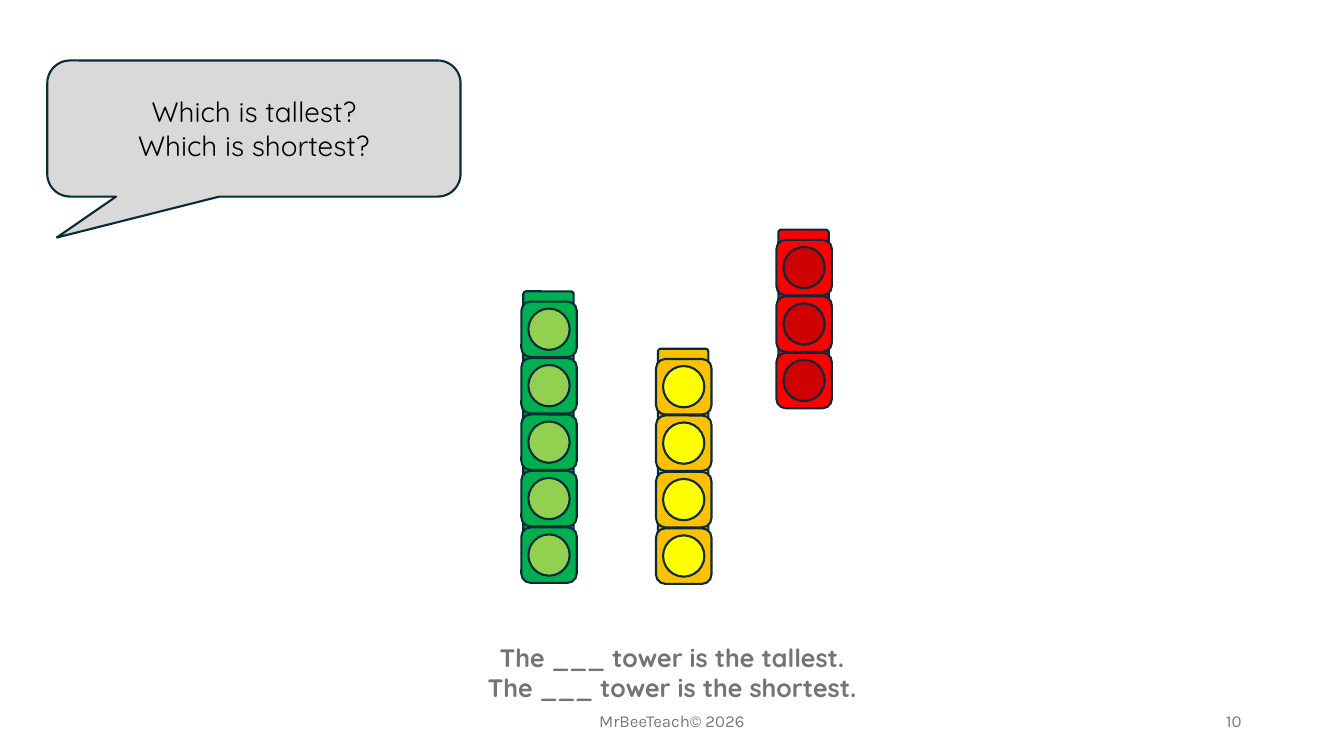
"""Build the tower comparison slide with its question, cube towers and answer stems."""
from dataclasses import dataclass

from lxml import etree
from pptx import Presentation
from pptx.dml import color
from pptx.enum import shapes, text
from pptx.oxml import ns
from pptx.util import Pt

COLOURS = {
    "outline": "092A39",
    "speech": "D9D9D9",
    "question": "000000",
    "answer": "747474",
    "footer": "797979",
    "green": "00B050",
    "light green": "92D050",
    "orange": "FFC000",
    "yellow": "FFFF00",
    "red": "FF0000",
    "dark red": "CC0000",
}
CUBE_SIZE = 39.6
CUBE_PITCH = 40.32
CAP_RISE = 7.3


@dataclass(frozen=True)
class Tower:
    """A stack of cubes, placed by the top left of its lowest cube."""
    left: float
    base: float
    cubes: int
    body: str
    disc: str
    opacity: int = 100


@dataclass(frozen=True)
class Caption:
    """A text box with its lines and format."""
    box: tuple
    lines: tuple
    font: str
    size: float
    colour: str
    align: text.PP_ALIGN = text.PP_ALIGN.CENTER
    anchor: text.MSO_ANCHOR = text.MSO_ANCHOR.MIDDLE
    bold: bool = False


TOWERS = (
    Tower(372.4, 376.7, 5, "green", "light green"),
    Tower(468.6, 377.4, 4, "orange", "yellow"),
    Tower(554.6, 252, 3, "red", "dark red", opacity=93),
)
CAPTIONS = (
    Caption((318, 500.4, 324, 28.8), ("MrBeeTeach© 2026",), "Karla", 12, "footer"),
    Caption((678, 500.4, 216, 28.8), ("10",), "Karla", 12, "footer",
            align=text.PP_ALIGN.RIGHT),
    Caption((240, 455, 480, 51), ("The ___ tower is the tallest.", "The ___ tower is the shortest."),
            "Quicksand", 18, "answer", anchor=text.MSO_ANCHOR.TOP, bold=True),
)


def write(frame, lines: tuple, *, font: str, size: float, colour: str,
          align=text.PP_ALIGN.CENTER, anchor=text.MSO_ANCHOR.MIDDLE, bold: bool = False) -> None:
    """Fill a text frame with one paragraph per line."""
    frame.word_wrap = True
    frame.vertical_anchor = anchor
    for index, line in enumerate(lines):
        paragraph = frame.add_paragraph() if index else frame.paragraphs[0]
        paragraph.alignment = align
        run = paragraph.add_run()
        run.text = line
        run.font.name = font
        run.font.size = Pt(size)
        run.font.bold = bold
        run.font.color.rgb = color.RGBColor.from_string(COLOURS[colour])


def draw(parent, kind, box: tuple, fill: str, opacity: int = 100):
    """Add an outlined preset shape, given its box in points."""
    shape = parent.add_shape(kind, *map(Pt, box))
    shape.shadow.inherit = False
    shape.fill.solid()
    shape.fill.fore_color.rgb = color.RGBColor.from_string(COLOURS[fill])
    if opacity < 100:
        tint = shape._element.spPr.find(".//" + ns.qn("a:srgbClr"))
        etree.SubElement(tint, ns.qn("a:alpha"), val=str(opacity * 1000))
    shape.line.color.rgb = color.RGBColor.from_string(COLOURS["outline"])
    shape.line.width = Pt(1.5)
    return shape


def draw_tower(slide, tower: Tower) -> None:
    """Stack the cubes of a tower from the bottom up in one group."""
    stack = slide.shapes.add_group_shape().shapes
    rounded, round_ = shapes.MSO_SHAPE.ROUNDED_RECTANGLE, shapes.MSO_SHAPE.OVAL
    for level in range(tower.cubes):
        left, top = tower.left, tower.base - level * CUBE_PITCH
        draw(stack, rounded, (left + 1.4, top - CAP_RISE, 36, 12.2), tower.body)
        draw(stack, rounded, (left, top, CUBE_SIZE, CUBE_SIZE), tower.body)
        draw(stack, round_, (left + 5, top + 5, 29.5, 29.5), tower.disc, tower.opacity)


def draw_question(slide) -> None:
    """Add the speech bubble that asks the question."""
    bubble = draw(slide.shapes, shapes.MSO_SHAPE.ROUNDED_RECTANGULAR_CALLOUT,
                  (33.8, 43.2, 295.2, 97.2), "speech")
    for index, value in enumerate((-0.477, 0.801, 0.167)):
        bubble.adjustments[index] = value
    write(bubble.text_frame, ("Which is tallest?", "Which is shortest?"),
          font="Quicksand", size=20, colour="question")


def main() -> None:
    """Build and save the slide."""
    deck = Presentation()
    deck.slide_width, deck.slide_height = Pt(960), Pt(540)
    slide = deck.slides.add_slide(deck.slide_layouts[6])
    for caption in CAPTIONS:
        frame = slide.shapes.add_textbox(*map(Pt, caption.box)).text_frame
        write(frame, caption.lines, font=caption.font, size=caption.size, colour=caption.colour,
              align=caption.align, anchor=caption.anchor, bold=caption.bold)
    draw_question(slide)
    for tower in TOWERS:
        draw_tower(slide, tower)
    deck.save("out.pptx")


if __name__ == "__main__":
    main()
